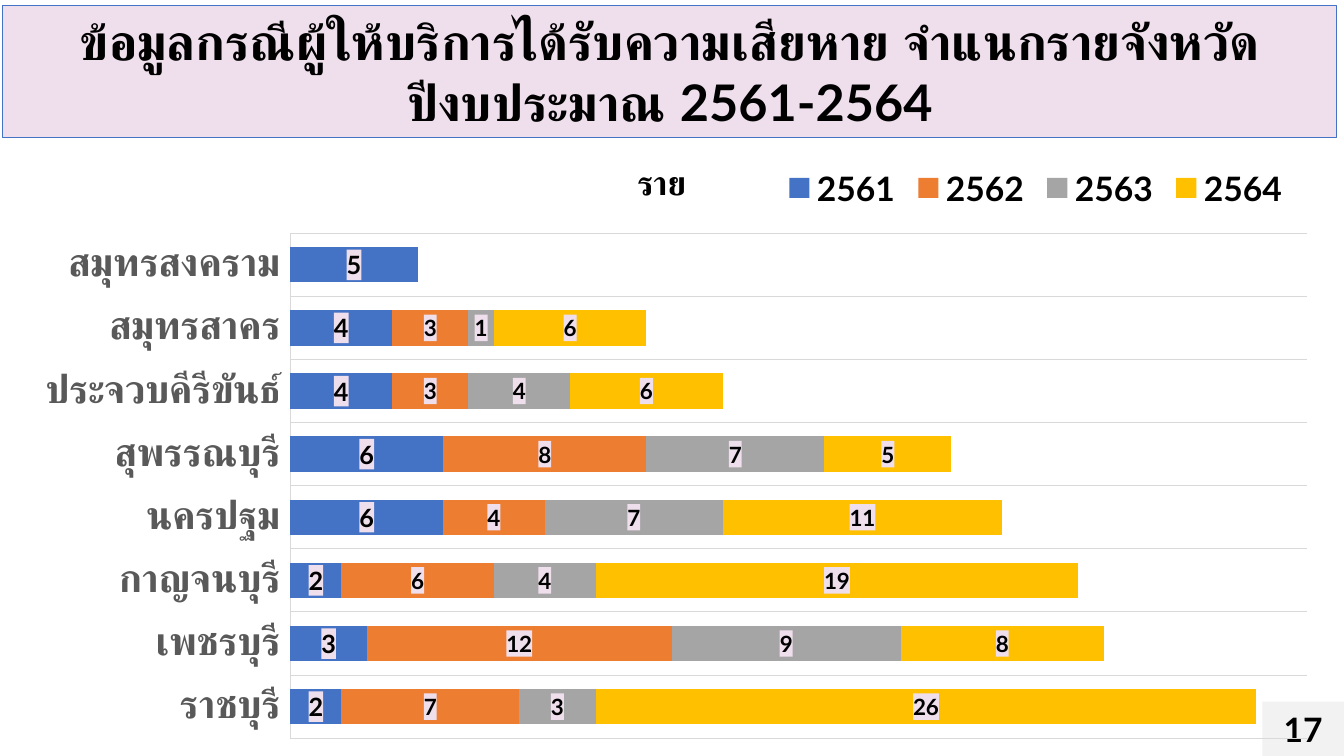
"""Builds the slide on harmed service providers by province."""
from lxml.etree import SubElement as Sub
from pptx import Presentation
from pptx.chart.data import CategoryChartData as Data
from pptx.dml.color import RGBColor as RGB
from pptx.enum.chart import XL_CHART_TYPE as Kind
from pptx.enum.chart import XL_LABEL_POSITION as Spot
from pptx.enum.chart import XL_LEGEND_POSITION as Side
from pptx.enum.chart import XL_TICK_LABEL_POSITION as Tag
from pptx.enum.chart import XL_TICK_MARK as Tick
from pptx.enum.shapes import MSO_SHAPE as Shape
from pptx.enum.text import MSO_ANCHOR as Anchor
from pptx.enum.text import PP_ALIGN as Align
from pptx.oxml.ns import qn
from pptx.util import Inches, Pt

HUES = {"ink": "000000", "pink": "EFDFED", "pale": "F2F2F2", "edge": "4472C4",
        "gray": "595959", "grid": "D9D9D9"}
TOWNS = ["ราชบุรี", "เพชรบุรี", "กาญจนบุรี", "นครปฐม", "สุพรรณบุรี",
         "ประจวบคีรีขันธ์", "สมุทรสาคร", "สมุทรสงคราม"]
YEARS = {
    "2561": ("4472C4", 18, [2, 3, 2, 6, 6, 4, 4, 5]),
    "2562": ("ED7D31", 16, [7, 12, 6, 4, 8, 3, 3, None]),
    "2563": ("A5A5A5", 16, [3, 9, 4, 7, 7, 4, 1, None]),
    "2564": ("FFC000", 16, [26, 8, 19, 11, 5, 6, 6, None]),
}


class Deck:
    """Holds the style and the current slide."""

    def __init__(self):
        self.show = Presentation()
        self.show.slide_width = Inches(13.33)
        self.show.slide_height = Inches(7.5)
        self.page = self.show.slides.add_slide(self.show.slide_layouts[6])

    def put(self, item, **vals):
        for key, val in vals.items():
            setattr(item, key, val)

    def font(self, font, size, hue="ink", name="Lato"):
        self.put(font, size=Pt(size), bold=True, name=name)
        font.color.rgb = RGB.from_string(HUES[hue])

    def line(self, line, hue):
        line.color.rgb = RGB.from_string(HUES[hue])
        line.width = Pt(0.75)

    def box(self, area, fill, lines, size, edge=None):
        box = self.page.shapes.add_shape(Shape.RECTANGLE, *map(Inches, area))
        box.shadow.inherit = False
        box.fill.solid()
        box.fill.fore_color.rgb = RGB.from_string(HUES[fill])
        if edge:
            self.line(box.line, edge)
        else:
            box.line.fill.background()
        frame = box.text_frame
        self.put(frame, word_wrap=True, vertical_anchor=Anchor.MIDDLE)
        frame.text = "\n".join(lines)
        for para in frame.paragraphs:
            para.alignment = Align.CENTER
            self.font(para.runs[0].font, size)

    def place(self, node, index, inner=False, **spots):
        old = node.find(qn("c:layout"))
        if old is not None:
            node.remove(old)
        frame = node.makeelement(qn("c:layout"))
        node.insert(index, frame)
        man = Sub(frame, qn("c:manualLayout"))
        if inner:
            Sub(man, qn("c:layoutTarget"), val="inner")
        for key in "xy":
            Sub(man, qn(f"c:{key}Mode"), val="edge")
        for key, val in spots.items():
            Sub(man, qn(f"c:{key}"), val=str(val))

    def labels(self, row, size):
        tags = row.data_labels
        self.put(tags, show_value=True, position=Spot.CENTER)
        self.font(tags.font, size)
        text = tags.font._element if hasattr(tags.font, "_element") else None
        text = row._element.find(qn("c:dLbls")).find(qn("c:txPr"))
        back = text.makeelement(qn("c:spPr"))
        fill = Sub(back, qn("a:solidFill"))
        Sub(fill, qn("a:srgbClr"), val=HUES["pink"])
        text.addprevious(back)

    def axes(self, chart):
        cats, vals = chart.category_axis, chart.value_axis
        self.put(cats, major_tick_mark=Tick.NONE, minor_tick_mark=Tick.NONE,
                 tick_label_position=Tag.LOW, has_major_gridlines=True)
        self.font(cats.tick_labels.font, 28, "gray", "Calibri")
        for item in (cats.format.line, cats.major_gridlines.format.line):
            self.line(item, "grid")
        self.put(vals, visible=False, has_major_gridlines=False,
                 minimum_scale=0, maximum_scale=40)

    def bars(self, area, title):
        data = Data()
        data.categories = TOWNS
        for year, (_, _, vals) in YEARS.items():
            data.add_series(year, vals)
        chart = self.page.shapes.add_chart(
            Kind.BAR_STACKED, *map(Inches, area), data).chart
        self.font(chart.font, 16)
        self.put(chart, has_title=True, has_legend=True)
        head = chart.chart_title
        head.text_frame.text = title
        self.font(head.text_frame.paragraphs[0].runs[0].font, 24)
        self.put(chart.legend, position=Side.TOP, include_in_layout=False)
        self.font(chart.legend.font, 24)
        self.axes(chart)
        plot = chart.plots[0]
        self.put(plot, gap_width=79, overlap=100, vary_by_categories=False)
        for row, (hue, size, _) in zip(plot.series, YEARS.values()):
            row.format.fill.solid()
            row.format.fill.fore_color.rgb = RGB.from_string(hue)
            self.labels(row, size)
        self.place(head._element, 1, x=0.47, y=0.11)
        self.place(chart.legend._element, 1, x=0.58, y=0.12, w=0.39, h=0.07)
        self.place(plot._element.getparent(), 0, True,
                   x=0.213, y=0.223, w=0.767, h=0.758)


def main():
    deck = Deck()
    deck.box((0.03, 0.05, 13.23, 1.31), "pink",
             ["ข้อมูลกรณีผู้ให้บริการได้รับความเสียหาย จำแนกรายจังหวัด",
              "ปีงบประมาณ 2561-2564"], 36, "edge")
    deck.box((12.52, 6.96, 0.81, 0.54), "pale", ["17"], 24)
    deck.bars((0.08, 0.84, 13.15, 6.61), "ราย")
    deck.show.save("out.pptx")


if __name__ == "__main__":
    main()
